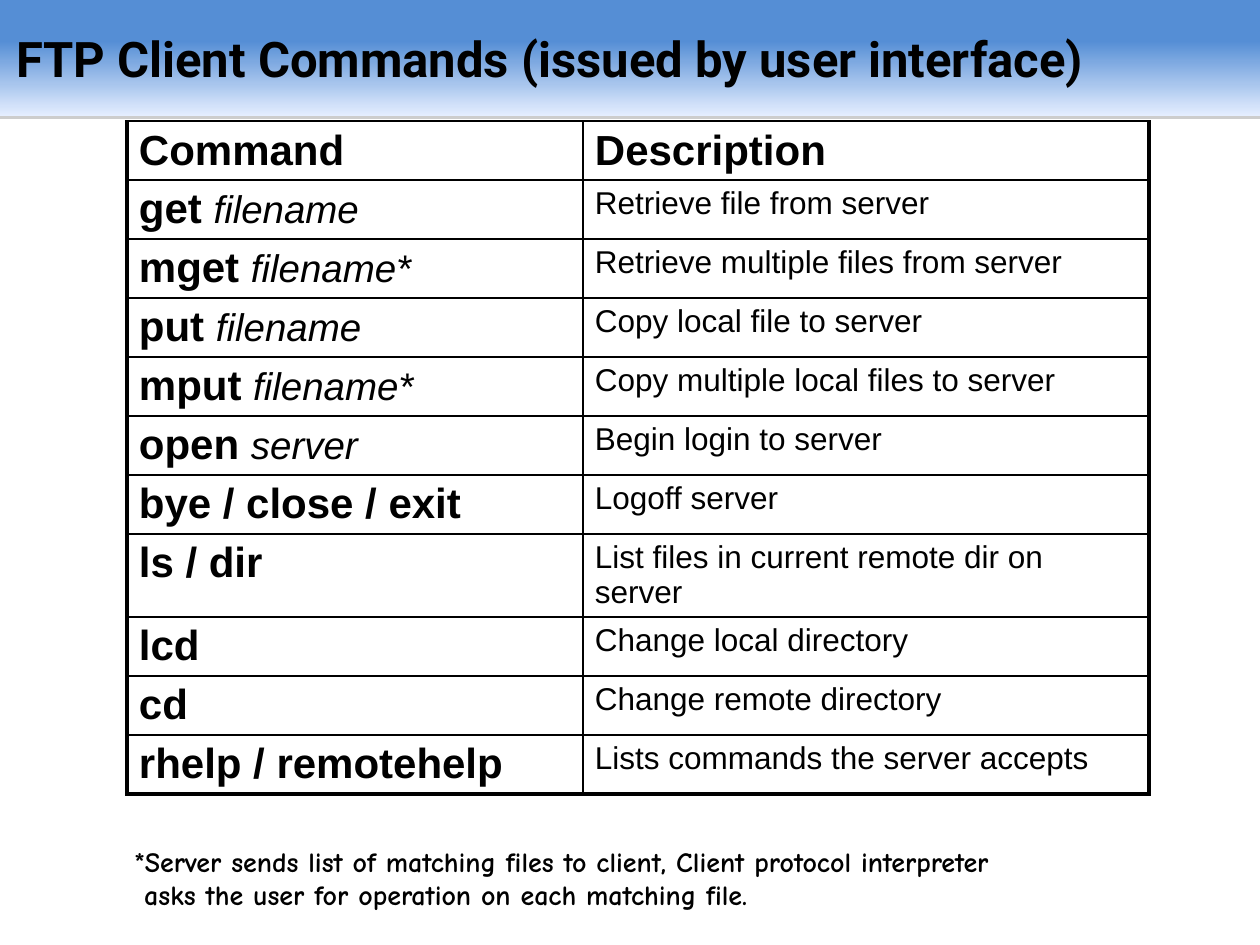
"""Builds a slide with a table of FTP client commands."""
from lxml import etree
from pptx import Presentation
from pptx.dml.color import RGBColor
from pptx.enum.text import MSO_ANCHOR, MSO_AUTO_SIZE, PP_ALIGN
from pptx.oxml import parse_xml
from pptx.oxml.ns import qn
from pptx.util import Pt

TOP, MIDDLE = MSO_ANCHOR.TOP, MSO_ANCHOR.MIDDLE
LEFT = PP_ALIGN.LEFT
FIXED = MSO_AUTO_SIZE.NONE
TITLE_ONLY = 5
SCALE = 914400 / 126
NS = 'xmlns:a="http://schemas.openxmlformats.org/drawingml/2006/main"'
COLORS = {"ink": "000000", "blue": "558ED5", "pale": "E5EEFF", "shade": "808080"}
HEAD = {"name": "Arial", "size": Pt(24), "bold": True, "italic": False}
ARG = {**HEAD, "size": Pt(22), "bold": False, "italic": True}
BODY = {**HEAD, "size": Pt(18), "bold": False}
TITLE = {"name": "Roboto", "size": Pt(28), "bold": True}
NOTE = {"name": "Comic Neue", "size": Pt(16), "bold": True}
THIN, THICK = Pt(1), Pt(2.25)

COMMANDS = [
    ("get ", "filename", "Retrieve file from server"),
    ("mget ", "filename*", "Retrieve multiple files from server"),
    ("put ", "filename", "Copy local file to server"),
    ("mput ", "filename*", "Copy multiple local files to server"),
    ("open ", "server", "Begin login to server"),
    ("bye / close / exit", "", "Logoff server"),
    ("ls / dir", "", "List files in current remote dir on server"),
    ("lcd", "", "Change local directory"),
    ("cd", "", "Change remote directory"),
    ("rhelp / remotehelp", "", "Lists commands the server accepts"),
]


def px(n):
    return round(n * SCALE)


class Deck:
    """Holds the style and the current slide."""

    def __init__(self, width, height):
        self.prs = Presentation()
        self.prs.slide_width, self.prs.slide_height = px(width), px(height)
        self.slide = self.prs.slides.add_slide(self.prs.slide_layouts[TITLE_ONLY])

    def text(self, para, words, style):
        run = para.add_run()
        run.text = words
        for key, value in style.items():
            setattr(run.font, key, value)
        run.font.color.rgb = RGBColor.from_string(COLORS["ink"])

    def inset(self, item, sides):
        for side, size in zip(("left", "top", "right", "bottom"), sides):
            setattr(item, "margin_" + side, px(size))

    def title(self, words, box):
        shape = self.slide.shapes.title
        shape.left, shape.top, shape.width, shape.height = map(px, box)
        frame = shape.text_frame
        frame.auto_size, frame.vertical_anchor = FIXED, MIDDLE
        self.inset(frame, (4, 1, 4, 1))
        frame.paragraphs[0].alignment = LEFT
        self.text(frame.paragraphs[0], words, TITLE)
        stops = "".join(
            f'<a:gs pos="{pos * 1000}"><a:srgbClr val="{COLORS[name]}"/></a:gs>'
            for pos, name in ((0, "blue"), (35, "blue"), (100, "pale")))
        for part in (
            f'<a:prstGeom {NS} prst="rect"><a:avLst/></a:prstGeom>',
            f'<a:gradFill {NS}><a:gsLst>{stops}</a:gsLst><a:lin ang="5400000"/></a:gradFill>',
            f'<a:effectLst {NS}><a:outerShdw blurRad="0" dist="{Pt(1.6)}" dir="5400000">'
            f'<a:srgbClr val="{COLORS["shade"]}"><a:alpha val="38000"/></a:srgbClr>'
            '</a:outerShdw></a:effectLst>',
        ):
            shape.element.spPr.append(parse_xml(part))

    def border(self, cell, widths):
        props = cell._tc.get_or_add_tcPr()
        for i, (side, width) in enumerate(zip("LRTB", widths)):
            line = etree.Element(qn("a:ln" + side), w=str(int(width)))
            fill = etree.SubElement(line, qn("a:solidFill"))
            etree.SubElement(fill, qn("a:srgbClr"), val=COLORS["ink"])
            props.insert(i, line)

    def table(self, rows, box, cols, heights):
        grid = self.slide.shapes.add_table(len(rows), len(cols), *map(px, box)).table
        grid.first_row = grid.horz_banding = False
        for col, width in zip(grid.columns, cols):
            col.width = px(width)
        for r, row in enumerate(rows):
            grid.rows[r].height = px(heights[r])
            for c, runs in enumerate(row):
                cell = grid.cell(r, c)
                cell.fill.background()
                cell.vertical_anchor = TOP if r else MIDDLE
                self.inset(cell, (12, 6, 12, 5))
                for words, style in runs:
                    self.text(cell.text_frame.paragraphs[0], words, style)
                self.border(cell, (
                    THIN if c else THICK,
                    THICK if c == len(cols) - 1 else THIN,
                    THIN,
                    THICK if r == len(rows) - 1 else THIN))

    def note(self, lines, box):
        frame = self.slide.shapes.add_textbox(*map(px, box)).text_frame
        frame.word_wrap = True
        para = frame.paragraphs[0]
        for i, words in enumerate(lines):
            if i:
                para.add_line_break()
            self.text(para, words, NOTE)


def main():
    deck = Deck(1260, 945)
    deck.title(" FTP Client Commands (issued by user interface)", (0, 0, 1260, 116))
    rows = [[[("Command", HEAD)], [("Description", HEAD)]]]
    for name, arg, about in COMMANDS:
        left = [(name, HEAD)] + ([(arg, ARG)] if arg else [])
        rows.append([left, [(about, BODY)]])
    heights = [83 if row[0][0][0] == "ls / dir" else 59 for row in rows]
    deck.table(rows, (127, 121, 1022, sum(heights)), (456, 566), heights)
    deck.note(("*Server sends list of matching files to client, Client protocol interpreter",
               " asks the user for operation on each matching file."), (122, 838, 1036, 81))
    deck.prs.save("out.pptx")


if __name__ == "__main__":
    main()
